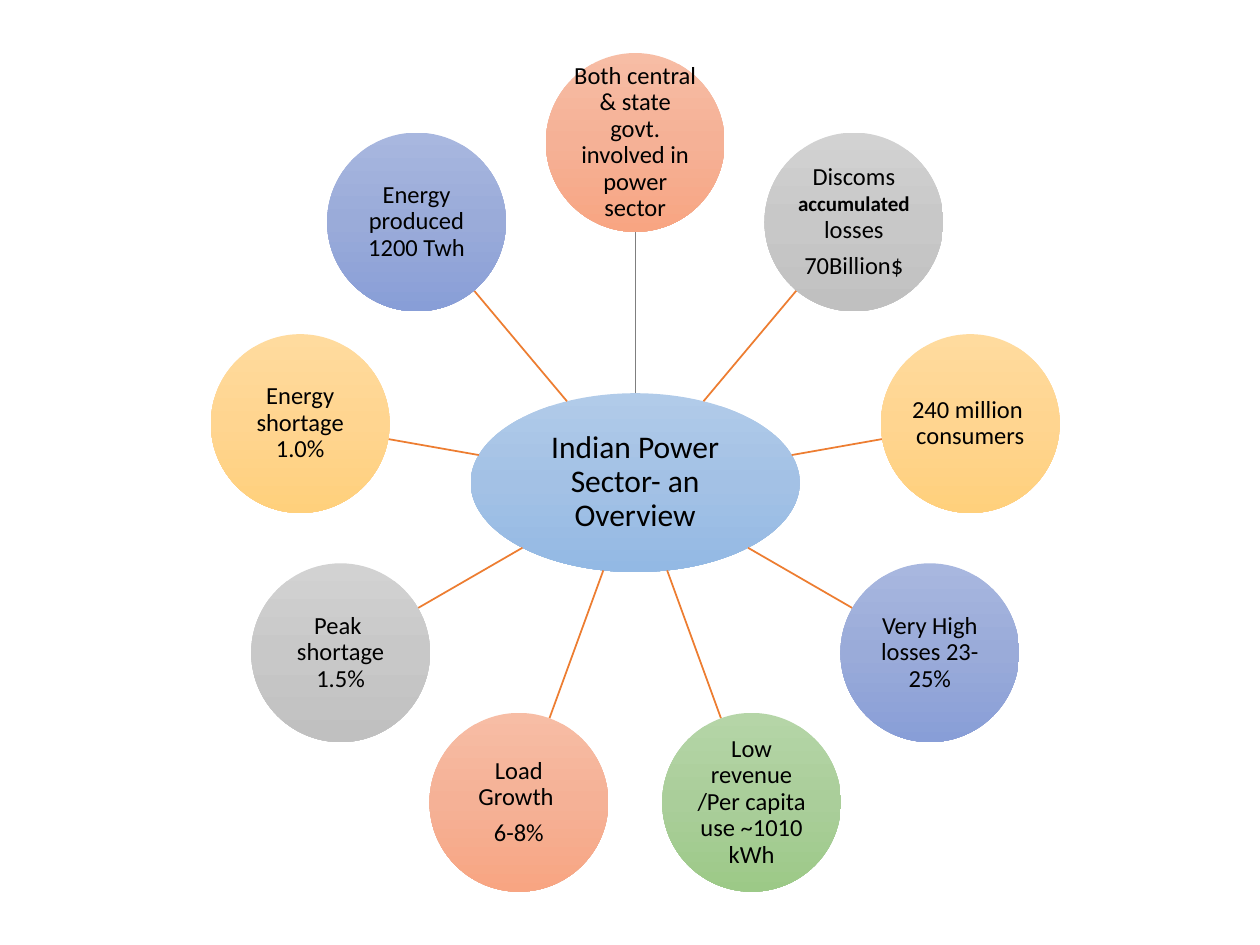
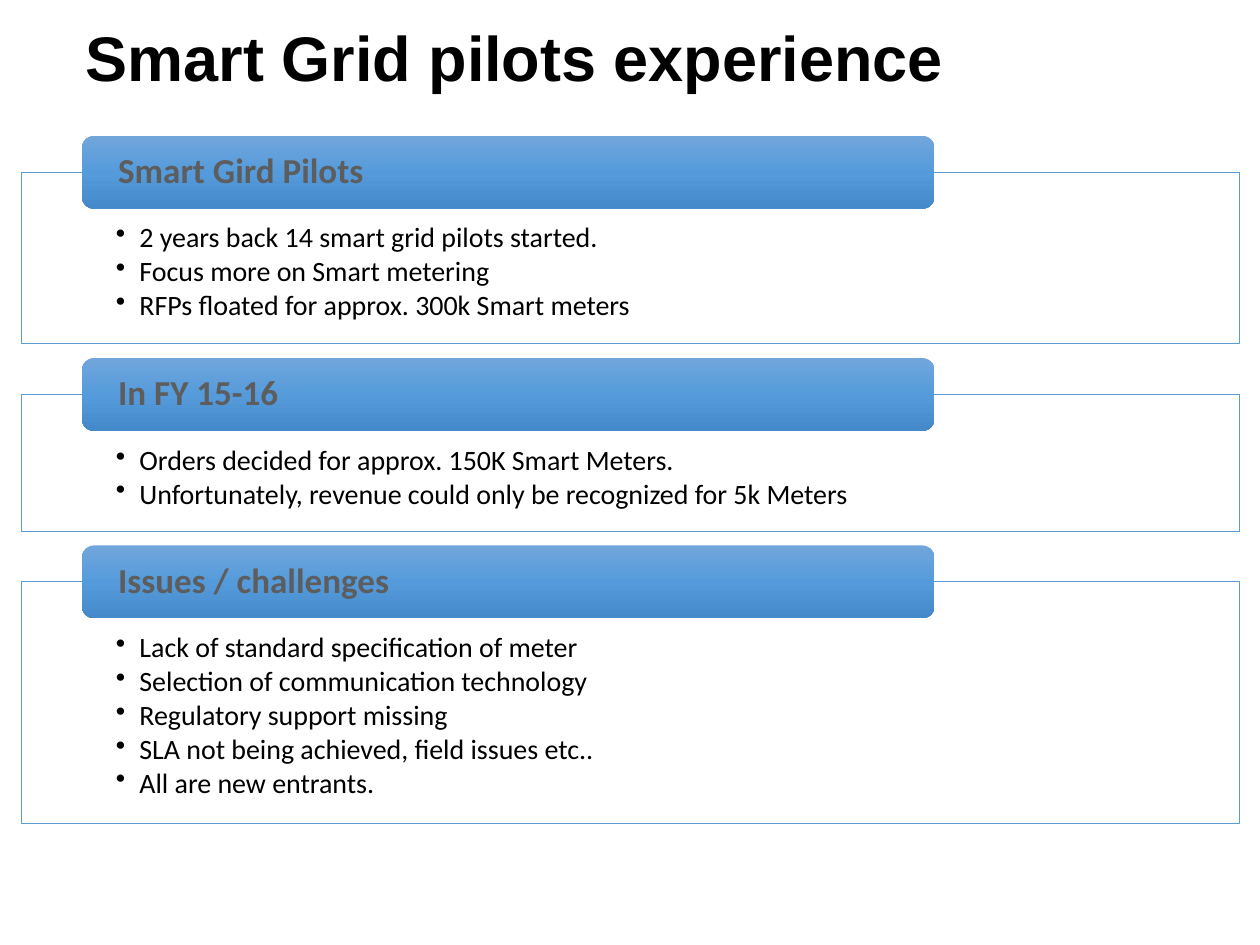
"""Build two slides: an Indian power sector overview and the smart grid pilots experience."""
from copy import deepcopy
from dataclasses import dataclass
from math import cos, hypot, radians, sin

from lxml.etree import SubElement
from pptx import Presentation
from pptx.dml.color import RGBColor
from pptx.enum.shapes import MSO_CONNECTOR, MSO_SHAPE
from pptx.enum.text import MSO_ANCHOR, PP_ALIGN
from pptx.oxml.ns import qn
from pptx.util import Pt


@dataclass(frozen=True)
class Theme:
    body_font: str = "Calibri"
    title_font: str = "Arial"
    title_size: int = 36
    header_size: int = 20
    hub_size: int = 18
    bullet_size: int = 16
    node_size: int = 14
    small_size: int = 12
    text: str = "000000"
    header_text: str = "5D5D5D"
    panel: str = "FFFFFF"
    panel_line: str = "5B9BD5"
    spoke: str = "ED7D31"
    top_spoke: str = "7F7F7F"
    hub: tuple = ("B1CBE9", "A3C1E5", "93B9E4")
    orange: tuple = ("F7BDA5", "F5B196", "F8A582")
    gray: tuple = ("D2D2D2", "C8C8C8", "C0C0C0")
    gold: tuple = ("FFDB9E", "FFD590", "FFD07C")
    indigo: tuple = ("A8B7DF", "9AABD9", "889ED7")
    green: tuple = ("B5D5A7", "AACE9A", "9CC987")
    header: tuple = ("71A6DB", "559BDB", "448ACA")


theme = Theme()


def add_gradient_shape(page, kind, left, top, width, height, colors):
    shape = page.shapes.add_shape(kind, Pt(left), Pt(top), Pt(width), Pt(height))
    shape.shadow.inherit = False
    shape.line.fill.background()
    shape.fill.gradient()
    shape.fill.gradient_angle = 270
    stop_list = shape._element.spPr.find(".//" + qn("a:gsLst"))
    stop_list.insert(1, deepcopy(stop_list[0]))
    for stop, position, color in zip(shape.fill.gradient_stops, (0, 0.5, 1), colors):
        stop.position = position
        stop.color.rgb = RGBColor.from_string(color)
    return shape


def write_text(shape, paragraphs, size, margins, space_after=0, align=PP_ALIGN.LEFT,
               anchor=MSO_ANCHOR.MIDDLE, color=theme.text, font=theme.body_font, bold=False):
    frame = shape.text_frame
    frame.word_wrap = True
    frame.vertical_anchor = anchor
    frame.margin_left, frame.margin_top, frame.margin_right, frame.margin_bottom = map(Pt, margins)
    for index, content in enumerate(paragraphs):
        para = frame.add_paragraph() if index else frame.paragraphs[0]
        para.alignment = align
        para.line_spacing = 0.9
        para.space_after = Pt(space_after)
        para.font.name = font
        para.font.size = Pt(size)
        para.font.bold = bold
        para.font.color.rgb = RGBColor.from_string(color)
        for part in content.split("*"):
            para.add_run().text = part
    return frame


deck = Presentation()
deck.slide_width, deck.slide_height = Pt(720), Pt(540)
blank_layout = deck.slide_layouts[6]

page = deck.slides.add_slide(blank_layout)
center_x, center_y = 363, 275.8
hub_width, node_diameter, orbit = 188, 102.2, 194.4
hub_height = node_diameter
node_margins = (0.72,) * 4

hub = add_gradient_shape(page, MSO_SHAPE.OVAL, center_x - hub_width / 2, center_y - hub_height / 2,
                         hub_width, hub_height, theme.hub)
write_text(hub, ["Indian Power Sector- an Overview"], theme.hub_size, node_margins, 6.3, PP_ALIGN.CENTER)

nodes = [
    (theme.orange, ["Both central & state govt. involved in power sector"]),
    (theme.gray, ["Discoms *accumulated* losses", "70Billion$"]),
    (theme.gold, ["240 million  consumers"]),
    (theme.indigo, ["Very High losses 23-25%"]),
    (theme.green, ["Low revenue /Per capita use ~1010 kWh"]),
    (theme.orange, ["Load Growth ", "6-8%"]),
    (theme.gray, ["Peak  shortage 1.5%"]),
    (theme.gold, ["Energy shortage 1.0%"]),
    (theme.indigo, ["Energy produced 1200 Twh"]),
]
for index, (colors, paragraphs) in enumerate(nodes):
    angle = radians(index * 360 / len(nodes))
    across, down = sin(angle), -cos(angle)
    hub_edge = 1 / hypot(across / (hub_width / 2), down / (hub_height / 2))
    node_edge = orbit - node_diameter / 2
    spoke = page.shapes.add_connector(
        MSO_CONNECTOR.STRAIGHT,
        Pt(center_x + hub_edge * across), Pt(center_y + hub_edge * down),
        Pt(center_x + node_edge * across), Pt(center_y + node_edge * down))
    spoke.line.color.rgb = RGBColor.from_string(theme.spoke if index else theme.top_spoke)
    spoke.line.width = Pt(1 if index else 0.5)
    SubElement(spoke._element.spPr, qn("a:effectLst"))
    node = add_gradient_shape(
        page, MSO_SHAPE.OVAL, center_x + orbit * across - node_diameter / 2,
        center_y + orbit * down - node_diameter / 2, node_diameter, node_diameter, colors)
    frame = write_text(node, paragraphs, theme.node_size, node_margins, 5.4, PP_ALIGN.CENTER)
    for span in frame.paragraphs[0].runs[1:2]:
        span.font.size = Pt(theme.small_size)
        span.font.bold = True

page = deck.slides.add_slide(blank_layout)
sections = [
    ("Smart Gird Pilots", [
        "2 years back 14 smart grid pilots started.",
        "Focus more on Smart metering",
        "RFPs floated for approx. 300k Smart meters"]),
    ("In FY 15-16", [
        "Orders decided for approx. 150K Smart Meters.",
        "Unfortunately, revenue could only be recognized for 5k Meters"]),
    ("Issues / challenges", [
        "Lack of standard specification of meter",
        "Selection of communication technology",
        "Regulatory support missing",
        "SLA not being achieved, field issues etc..",
        "All are new entrants."]),
]
panel_top, panel_gap, panel_padding, bullet_height = 98.4, 28.8, 38.5, 19.9
header_height = 41.6
for heading, bullets in sections:
    panel_height = panel_padding + bullet_height * len(bullets)
    panel = page.shapes.add_shape(MSO_SHAPE.RECTANGLE, Pt(12.2), Pt(panel_top), Pt(696), Pt(panel_height))
    panel.shadow.inherit = False
    panel.fill.solid()
    panel.fill.fore_color.rgb = RGBColor.from_string(theme.panel)
    SubElement(panel._element.spPr.find(".//" + qn("a:srgbClr")), qn("a:alpha"), val="90000")
    panel.line.color.rgb = RGBColor.from_string(theme.panel_line)
    panel.line.width = Pt(0.5)
    frame = write_text(panel, bullets, theme.bullet_size, (54, 29.5, 54, 8.6), 2.1, anchor=MSO_ANCHOR.TOP)
    for para in frame.paragraphs:
        properties = para._p.get_or_add_pPr()
        properties.set("marL", str(Pt(13.5)))
        properties.set("indent", str(Pt(-13.5)))
        SubElement(properties, qn("a:buChar"), char="•")
        properties.append(properties.find(qn("a:defRPr")))
    header = add_gradient_shape(page, MSO_SHAPE.ROUNDED_RECTANGLE, 46.8, panel_top - header_height / 2,
                                487.2, header_height, theme.header)
    write_text(header, [heading], theme.header_size, (18.7, 0, 18.7, 0), 7,
               color=theme.header_text, bold=True)
    panel_top += panel_height + panel_gap

title = page.shapes.add_textbox(Pt(42), Pt(12.2), Pt(648), Pt(56))
write_text(title, ["Smart Grid pilots experience"], theme.title_size, (7.2, 3.6, 7.2, 3.6),
           anchor=MSO_ANCHOR.TOP, font=theme.title_font, bold=True)

deck.save("out.pptx")
